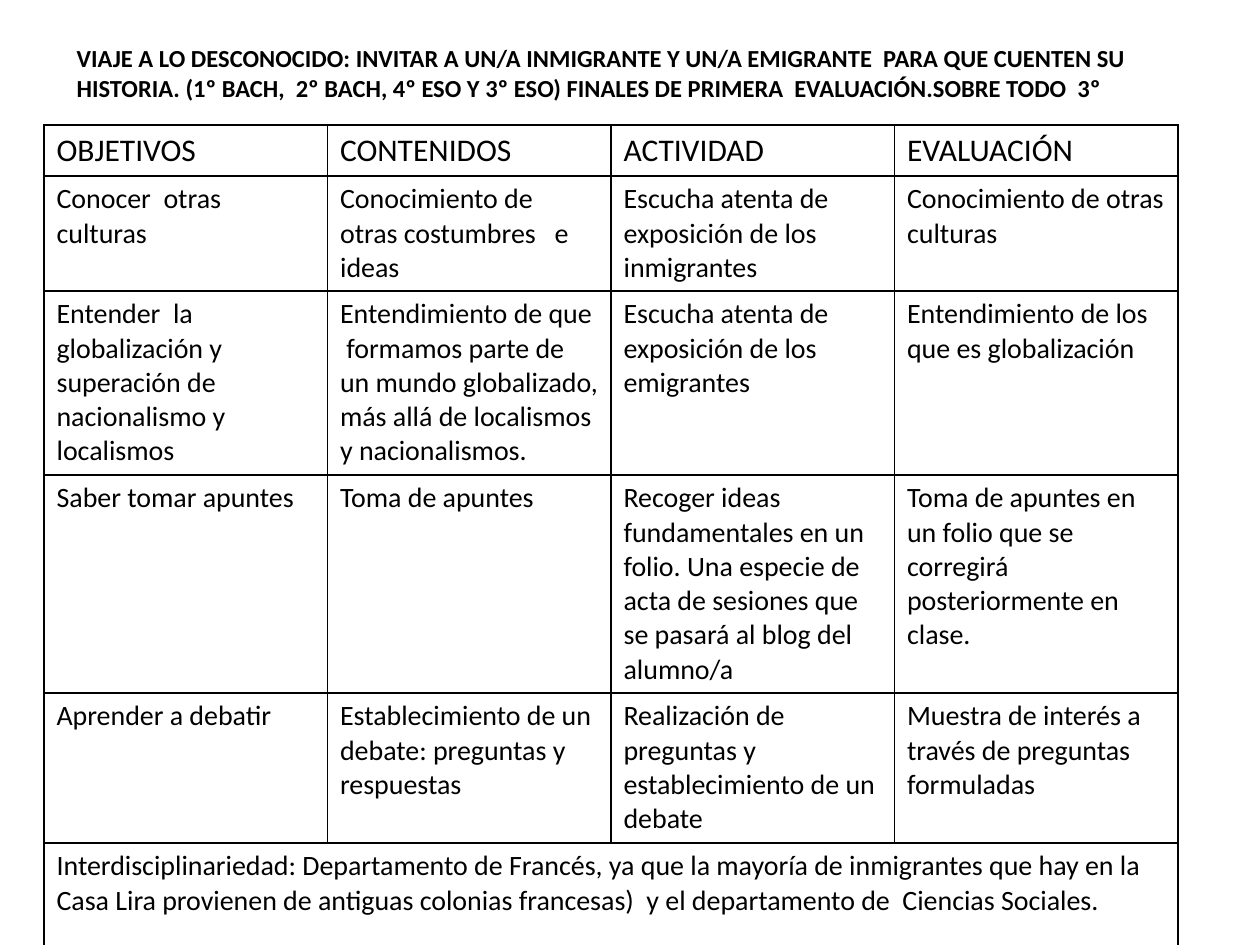
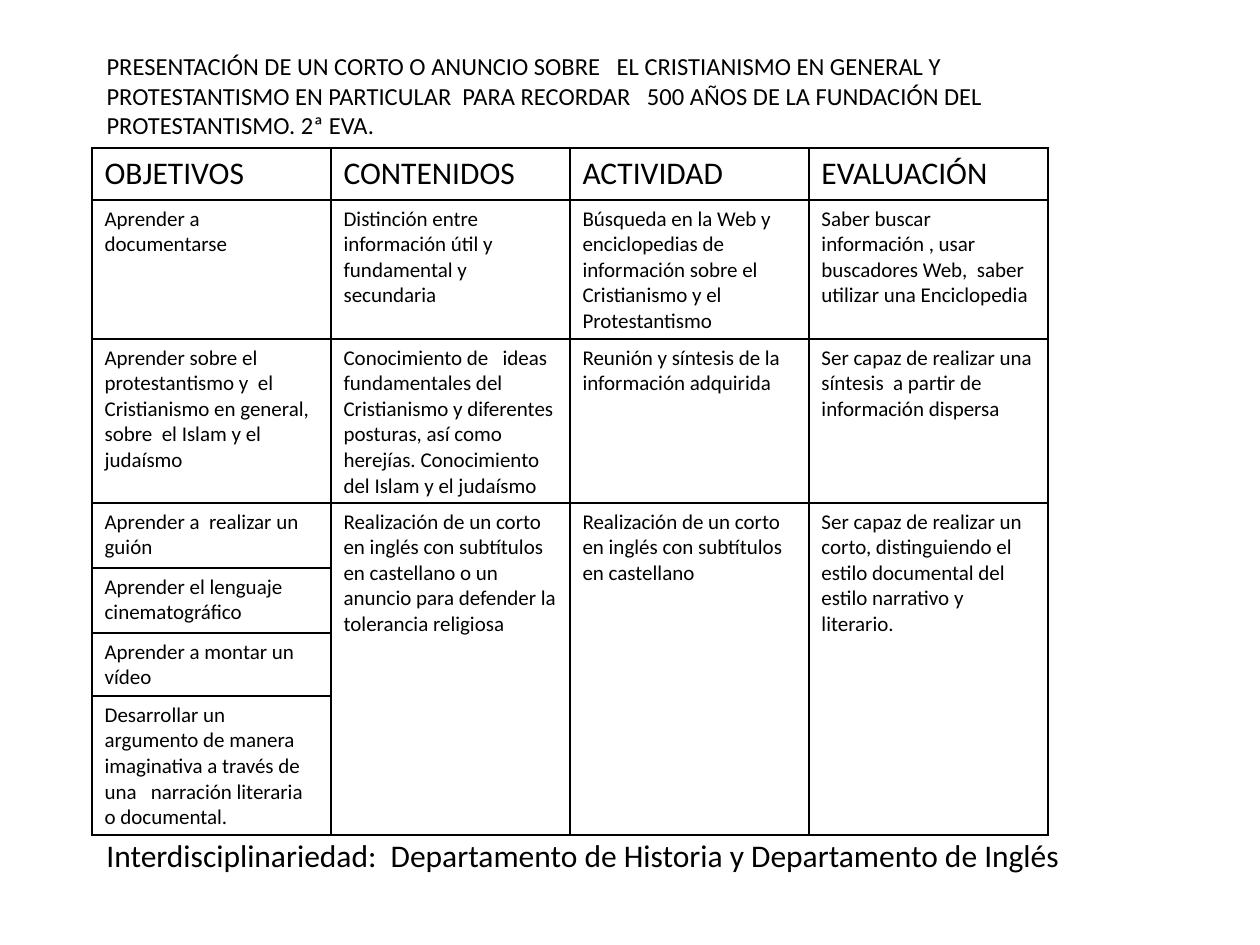
"""Build two didactic planning slides, each with a title and a bordered table."""
from dataclasses import dataclass

from lxml.etree import SubElement
from pptx import Presentation
from pptx.dml.color import RGBColor
from pptx.enum.text import MSO_ANCHOR, MSO_AUTO_SIZE, PP_ALIGN
from pptx.oxml.ns import qn
from pptx.slide import Slide
from pptx.table import _Cell as Cell
from pptx.text.text import TextFrame
from pptx.util import Emu, Pt

PX_PER_INCH = 126
BLACK = RGBColor(0x00, 0x00, 0x00)
FONT = "Calibri"
TITLE_ONLY = 5
HEADERS = ("OBJETIVOS", "CONTENIDOS", "ACTIVIDAD", "EVALUACIÓN")
HEADER_SIZE = 18
TITLE_SIZE = 14


@dataclass(frozen=True)
class Box:
    left: int
    top: int
    width: int
    height: int


@dataclass(frozen=True)
class TextBlock:
    text: str
    box: Box


@dataclass(frozen=True)
class Merge:
    first: tuple[int, int]
    last: tuple[int, int]


@dataclass(frozen=True)
class Plan:
    title: TextBlock
    title_bold: bool
    left: int
    top: int
    width: int
    row_heights: tuple[int, ...]
    rows: tuple[tuple[str, ...], ...]
    body_size: int
    merges: tuple[Merge, ...]
    footer: TextBlock | None = None


PLANS = (
    Plan(
        title=TextBlock(
            "VIAJE A LO DESCONOCIDO: INVITAR A UN/A INMIGRANTE Y UN/A EMIGRANTE  PARA QUE CUENTEN SU "
            "HISTORIA. (1º BACH,  2º BACH, 4º ESO Y 3º ESO) FINALES DE PRIMERA  EVALUACIÓN.SOBRE TODO  3º",
            Box(64, 37, 1101, 72),
        ),
        title_bold=True,
        left=44,
        top=125,
        width=1134,
        row_heights=(51, 115, 184, 218, 150, 112),
        rows=(
            HEADERS,
            (
                "Conocer  otras culturas",
                "Conocimiento de  otras costumbres   e ideas",
                "Escucha atenta de exposición de los inmigrantes",
                "Conocimiento de otras culturas",
            ),
            (
                "Entender  la globalización y superación de nacionalismo y localismos",
                "Entendimiento de que  formamos parte de un mundo globalizado, más allá de localismos "
                "y nacionalismos.",
                "Escucha atenta de exposición de los emigrantes",
                "Entendimiento de los que es globalización",
            ),
            (
                "Saber tomar apuntes",
                "Toma de apuntes",
                "Recoger ideas fundamentales en un folio. Una especie de acta de sesiones que "
                "se pasará al blog del alumno/a",
                "Toma de apuntes en un folio que se corregirá posteriormente en clase.",
            ),
            (
                "Aprender a debatir",
                "Establecimiento de un debate: preguntas y respuestas",
                "Realización de preguntas y establecimiento de un debate",
                "Muestra de interés a través de preguntas formuladas",
            ),
            (
                "Interdisciplinariedad: Departamento de Francés, ya que la mayoría de inmigrantes que hay en la "
                "Casa Lira provienen de antiguas colonias francesas)  y el departamento de  Ciencias Sociales.",
            ),
        ),
        body_size=16,
        merges=(Merge((5, 0), (5, 3)),),
    ),
    Plan(
        title=TextBlock(
            "PRESENTACIÓN DE UN CORTO O ANUNCIO SOBRE   EL CRISTIANISMO EN GENERAL Y "
            "PROTESTANTISMO EN PARTICULAR  PARA RECORDAR   500 AÑOS DE LA FUNDACIÓN DEL  "
            "PROTESTANTISMO. 2ª EVA.",
            Box(94, 45, 983, 102),
        ),
        title_bold=False,
        left=92,
        top=148,
        width=956,
        row_heights=(52, 139, 164, 65, 65, 63, 139),
        rows=(
            HEADERS,
            (
                "Aprender a documentarse",
                "Distinción entre  información útil y fundamental y secundaria",
                "Búsqueda en la Web y enciclopedias de información sobre el Cristianismo y el Protestantismo",
                "Saber buscar información , usar buscadores Web,  saber utilizar una Enciclopedia",
            ),
            (
                "Aprender sobre el protestantismo y  el Cristianismo en general, sobre  el Islam y el judaísmo",
                "Conocimiento de   ideas fundamentales del Cristianismo y diferentes posturas, así como "
                "herejías. Conocimiento del Islam y el judaísmo",
                "Reunión y síntesis de la información adquirida",
                "Ser capaz de realizar una síntesis  a partir de información dispersa",
            ),
            (
                "Aprender a  realizar un guión",
                "Realización de un corto en inglés con subtítulos en castellano o un anuncio para defender "
                "la tolerancia religiosa",
                "Realización de un corto en inglés con subtítulos en castellano",
                "Ser capaz de realizar un corto, distinguiendo el estilo documental del estilo narrativo "
                "y literario.",
            ),
            ("Aprender el lenguaje cinematográfico",),
            ("Aprender a montar un vídeo",),
            (
                "Desarrollar un argumento de manera imaginativa a través de una   narración literaria "
                "o documental.",
            ),
        ),
        body_size=12,
        merges=tuple(Merge((3, column), (6, column)) for column in range(1, 4)),
        footer=TextBlock(
            "Interdisciplinariedad:  Departamento de Historia y Departamento de Inglés",
            Box(94, 830, 1091, 50),
        ),
    ),
)


def px(length: float) -> Emu:
    return Emu(round(length * 914400 / PX_PER_INCH))


def write_text(frame: TextFrame, text: str, *, size: int, bold: bool = False) -> None:
    frame.word_wrap = True
    paragraph = frame.paragraphs[0]
    paragraph.alignment = PP_ALIGN.LEFT
    run = paragraph.add_run()
    run.text = text
    run.font.name = FONT
    run.font.size = Pt(size)
    run.font.bold = bold
    run.font.color.rgb = BLACK


def format_cell(cell: Cell) -> None:
    properties = cell._tc.get_or_add_tcPr()
    for side in ("lnL", "lnR", "lnT", "lnB"):
        line = SubElement(properties, qn(f"a:{side}"), w=str(Pt(1)))
        fill = SubElement(line, qn("a:solidFill"))
        SubElement(fill, qn("a:srgbClr"), val=str(BLACK))
    cell.fill.background()


def add_title(slide: Slide, title: TextBlock, bold: bool) -> None:
    shape = slide.shapes.title
    box = title.box
    shape.left, shape.top = px(box.left), px(box.top)
    shape.width, shape.height = px(box.width), px(box.height)
    shape.text_frame.vertical_anchor = MSO_ANCHOR.TOP
    shape.text_frame.auto_size = MSO_AUTO_SIZE.SHAPE_TO_FIT_TEXT
    write_text(shape.text_frame, title.text, size=TITLE_SIZE, bold=bold)


def add_plan_table(slide: Slide, plan: Plan) -> None:
    table = slide.shapes.add_table(
        len(plan.rows), len(HEADERS), px(plan.left), px(plan.top), px(plan.width), px(sum(plan.row_heights))
    ).table
    table.first_row = False
    table.horz_banding = False
    for column in table.columns:
        column.width = px(plan.width / len(HEADERS))
    for row, height in zip(table.rows, plan.row_heights):
        row.height = px(height)
    for cell in table.iter_cells():
        format_cell(cell)
    for merge in plan.merges:
        table.cell(*merge.first).merge(table.cell(*merge.last))
    for row_index, texts in enumerate(plan.rows):
        size = plan.body_size if row_index else HEADER_SIZE
        for column_index, text in enumerate(texts):
            write_text(table.cell(row_index, column_index).text_frame, text, size=size)


def add_footer(slide: Slide, footer: TextBlock) -> None:
    box = footer.box
    shape = slide.shapes.add_textbox(px(box.left), px(box.top), px(box.width), px(box.height))
    write_text(shape.text_frame, footer.text, size=HEADER_SIZE)


def main() -> None:
    presentation = Presentation()
    presentation.slide_width = px(1260)
    presentation.slide_height = px(945)
    for plan in PLANS:
        slide = presentation.slides.add_slide(presentation.slide_layouts[TITLE_ONLY])
        add_plan_table(slide, plan)
        add_title(slide, plan.title, plan.title_bold)
        if plan.footer:
            add_footer(slide, plan.footer)
    presentation.save("out.pptx")


if __name__ == "__main__":
    main()
